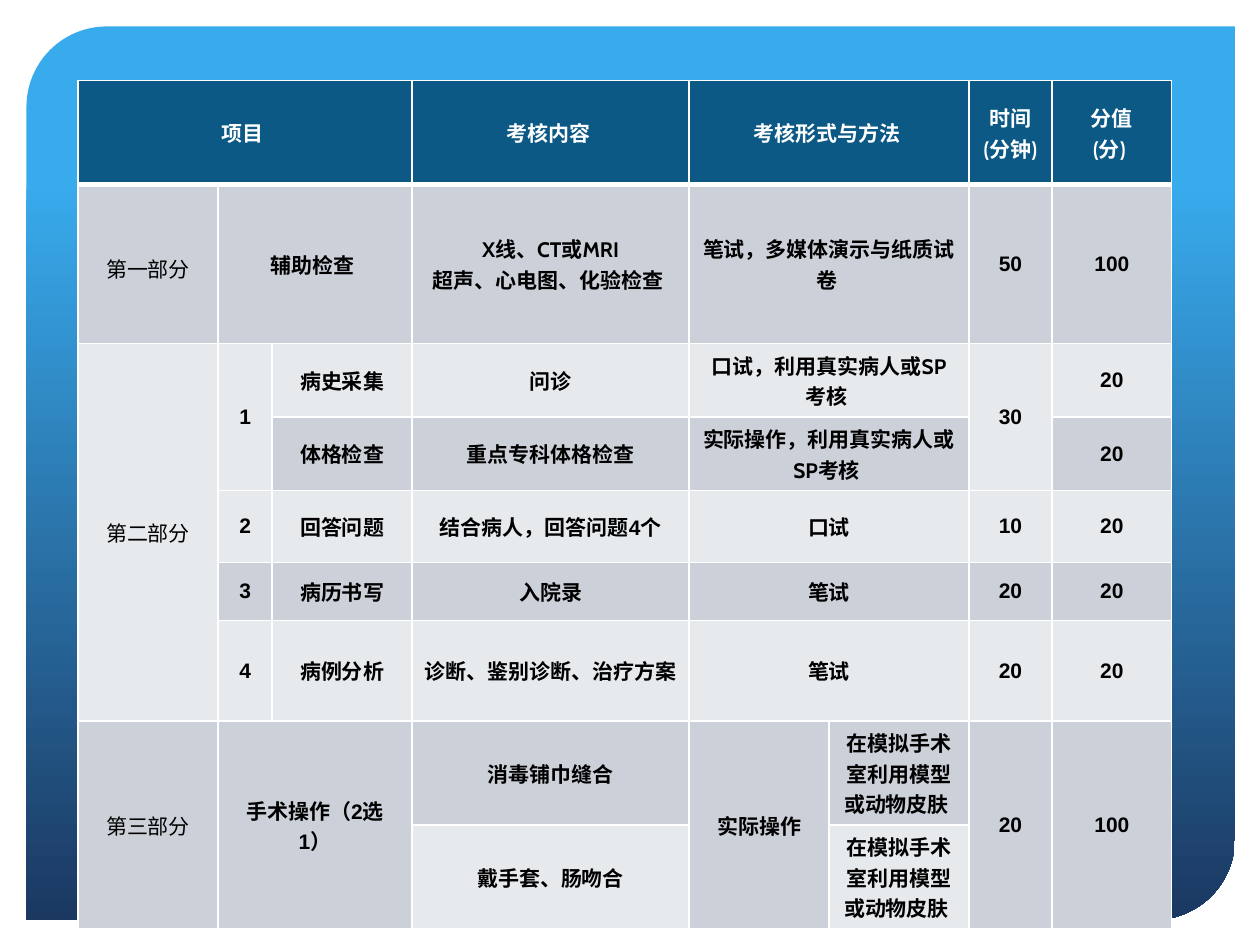
from dataclasses import dataclass

from lxml.etree import SubElement
from pptx import Presentation
from pptx.dml.color import RGBColor
from pptx.enum.shapes import MSO_SHAPE as Shape
from pptx.enum.text import MSO_ANCHOR as Anchor, PP_ALIGN as Align
from pptx.oxml.ns import qn
from pptx.util import Inches, Pt

WHITE = RGBColor(0xFF, 0xFF, 0xFF)
BLACK = RGBColor(0, 0, 0)
SKY = RGBColor(0x38, 0xAB, 0xED)
NAVY = RGBColor(0x1B, 0x38, 0x61)
HEADER = RGBColor(0x0C, 0x59, 0x86)
BANDS = (RGBColor(0xE7, 0xEA, 0xED), RGBColor(0xCC, 0xD1, 0xD9))
COLS = (1.11, 0.43, 1.11, 2.2, 1.11, 1.11, 0.66, 0.95)
ROWS = (0.46, 1.26, 0.57, 0.57, 0.57, 0.46, 0.8, 0.8, 0.8)


@dataclass
class Entry:
    row: int
    col: int
    text: str
    rows: int = 1
    cols: int = 1
    font: str = "Arial"


MODEL_SKIN = "在模拟手术室利用模型或动物皮肤 "
ENTRIES = [
    Entry(0, 0, "项目 ", cols=3, font="Cabin"),
    Entry(0, 3, "考核内容 ", font="Cabin"),
    Entry(0, 4, "考核形式与方法 ", cols=2, font="Cabin"),
    Entry(0, 6, "时间\n(分钟) ", font="Cabin"),
    Entry(0, 7, "分值\n(分) ", font="Cabin"),
    Entry(1, 0, "第一部分", font="Times New Roman"),
    Entry(1, 1, "辅助检查 ", cols=2, font="Cabin"),
    Entry(1, 3, "X线、CT或MRI\n超声、心电图、化验检查 ", font="Cabin"),
    Entry(1, 4, "笔试，多媒体演示与纸质试卷 ", cols=2, font="Cabin"),
    Entry(1, 6, "50"),
    Entry(1, 7, "100"),
    Entry(2, 0, "第二部分", rows=5),
    Entry(2, 1, "1", rows=2),
    Entry(2, 2, "病史采集"),
    Entry(2, 3, "问诊"),
    Entry(2, 4, "口试，利用真实病人或SP考核 ", cols=2, font="Cabin"),
    Entry(2, 6, "30", rows=2),
    Entry(2, 7, "20"),
    Entry(3, 2, "体格检查"),
    Entry(3, 3, "重点专科体格检查"),
    Entry(3, 4, "实际操作，利用真实病人或SP考核 ", cols=2, font="Cabin"),
    Entry(3, 7, "20"),
    Entry(4, 1, "2"),
    Entry(4, 2, "回答问题"),
    Entry(4, 3, "结合病人，回答问题4个"),
    Entry(4, 4, "口试", cols=2),
    Entry(4, 6, "10"),
    Entry(4, 7, "20"),
    Entry(5, 1, "3"),
    Entry(5, 2, "病历书写"),
    Entry(5, 3, "入院录"),
    Entry(5, 4, "笔试", cols=2),
    Entry(5, 6, "20"),
    Entry(5, 7, "20"),
    Entry(6, 1, "4"),
    Entry(6, 2, "病例分析"),
    Entry(6, 3, "诊断、鉴别诊断、治疗方案"),
    Entry(6, 4, "笔试", cols=2),
    Entry(6, 6, "20"),
    Entry(6, 7, "20"),
    Entry(7, 0, "第三部分", rows=2),
    Entry(7, 1, "手术操作（2选1）", rows=2, cols=2),
    Entry(7, 3, "消毒铺巾缝合"),
    Entry(7, 4, "实际操作", rows=2),
    Entry(7, 5, MODEL_SKIN, font="Cabin"),
    Entry(7, 6, "20", rows=2),
    Entry(7, 7, "100", rows=2),
    Entry(8, 3, "戴手套、肠吻合"),
    Entry(8, 5, MODEL_SKIN, font="Cabin"),
]


def add_backdrop(s) -> None:
    sp = s.shapes.add_shape(Shape.ROUND_2_DIAG_RECTANGLE, Inches(0.21),
                            Inches(0.21), Inches(9.59), Inches(7.09))
    sp.shadow.inherit = False
    sp.adjustments[0], sp.adjustments[1] = 0.09, 0
    sp.line.fill.background()
    sp.fill.gradient()
    sp.fill.gradient_angle = 270
    for stop, position, color in zip(sp.fill.gradient_stops, (0.17, 1), (SKY, NAVY)):
        stop.position = position
        stop.color.rgb = color


def style_cell(cell, row: int) -> None:
    tc_pr = cell._tc.get_or_add_tcPr()
    widths = {"lnL": 1, "lnR": 1, "lnT": 3 if row == 1 else 1, "lnB": 3 if row == 0 else 1}
    for side, width in widths.items():
        ln = SubElement(tc_pr, qn(f"a:{side}"), w=str(Pt(width)))
        fill = SubElement(ln, qn("a:solidFill"))
        SubElement(fill, qn("a:srgbClr"), val=str(WHITE))
    cell.fill.solid()
    cell.fill.fore_color.rgb = BANDS[row % 2] if row else HEADER


def write_entry(table, entry: Entry) -> None:
    cell = table.cell(entry.row, entry.col)
    if entry.rows > 1 or entry.cols > 1:
        cell.merge(table.cell(entry.row + entry.rows - 1, entry.col + entry.cols - 1))
    cell.vertical_anchor = Anchor.MIDDLE
    cell.text_frame.text = entry.text
    for p in cell.text_frame.paragraphs:
        p.alignment = Align.CENTER
        for r in p.runs:
            r.font.name = entry.font
            r.font.size = Pt(12)
            r.font.bold = entry.row == 0 or entry.col > 0
            r.font.color.rgb = BLACK if entry.row else WHITE


def add_exam_table(s) -> None:
    table = s.shapes.add_table(len(ROWS), len(COLS), Inches(0.62), Inches(0.64),
                               Inches(sum(COLS)), Inches(sum(ROWS))).table
    for column, width in zip(table.columns, COLS):
        column.width = Inches(width)
    for i, (row, height) in enumerate(zip(table.rows, ROWS)):
        row.height = Inches(height)
        for cell in row.cells:
            style_cell(cell, i)
    for entry in ENTRIES:
        write_entry(table, entry)
    part_one = table.cell(1, 0)
    part_one.margin_left = part_one.margin_right = Inches(0.07)
    part_one.margin_top = part_one.margin_bottom = 0
    part_one.text_frame.paragraphs[0].line_spacing = 1.25


def main() -> None:
    prs = Presentation()
    prs.slide_width, prs.slide_height = Inches(10), Inches(7.5)
    s = prs.slides.add_slide(prs.slide_layouts[6])
    add_backdrop(s)
    add_exam_table(s)
    prs.save("out.pptx")


if __name__ == "__main__":
    main()
